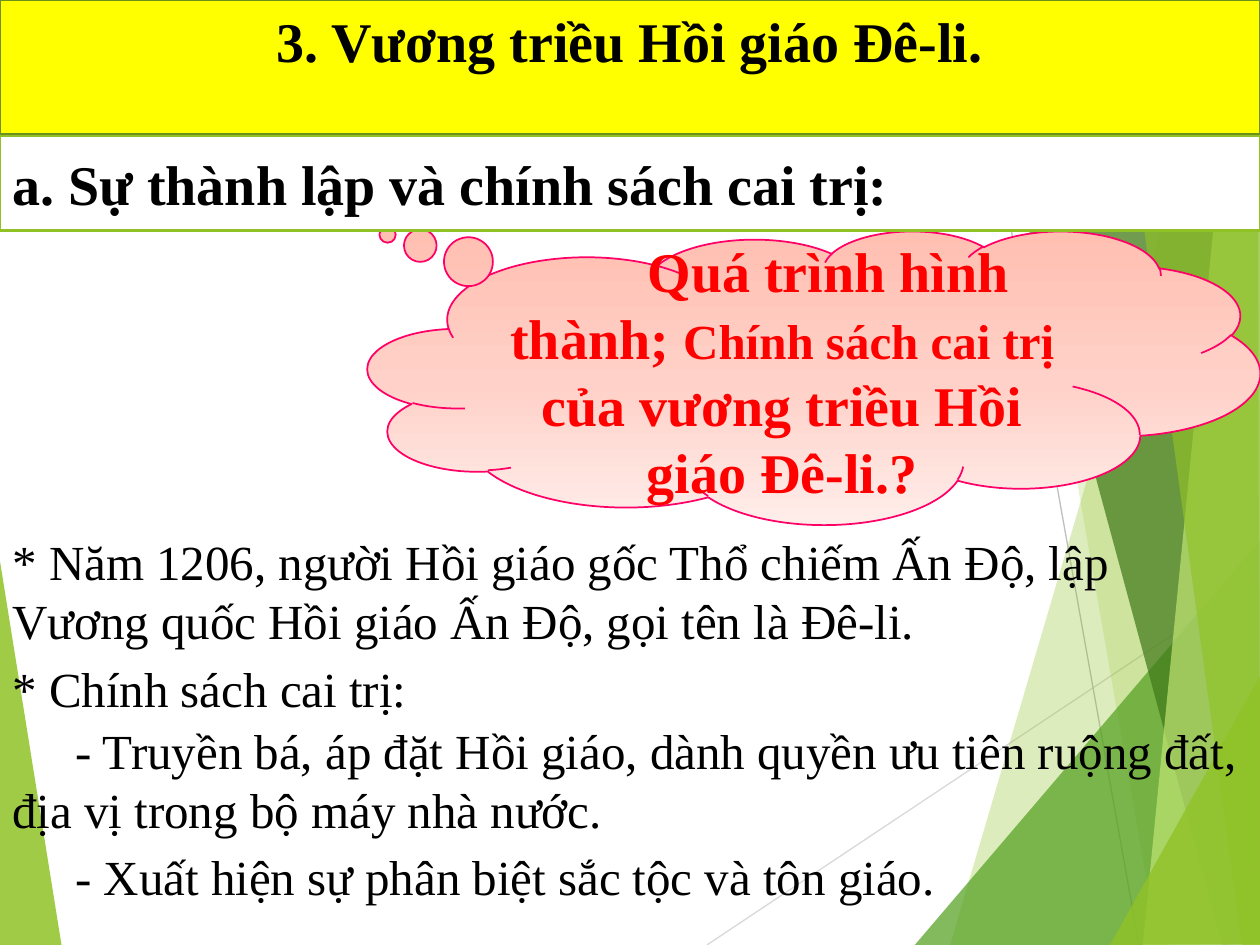
import copy

import pptx
import pptx.dml.color
import pptx.enum.shapes
import pptx.enum.text
import pptx.oxml
import pptx.oxml.ns
import pptx.util

Inches = pptx.util.Inches
Pt = pptx.util.Pt
SHAPES = pptx.enum.shapes.MSO_SHAPE
ALIGN = pptx.enum.text.PP_ALIGN
ANCHOR = pptx.enum.text.MSO_ANCHOR
FONT = "Times New Roman"

# Each facet: colour, opacity in percent, corner points in inches
LEFT_FACET = ("90C226", 85, [(-0.01, 4.39), (0.49, 7.51), (-0.01, 7.5)])
RIGHT_FACETS = [
    ("90C226", 30, [(9.75, 0), (7.54, 7.5), (10.02, 7.51), (10.01, 0.01)]),
    ("90C226", 20, [(7.88, -0.01), (9.19, 7.5), (10.01, 7.5), (10.01, -0.01)]),
    ("54A021", 72, [(7.26, 7.5), (10, 4.29), (10.01, 7.5)]),
    ("3F7819", 70, [(7.67, -0.01), (9.7, 7.5), (10.01, 7.49), (10.01, -0.01)]),
    ("C0E474", 70, [(9.81, -0.01), (9.07, 7.5), (10.01, 7.5), (10, -0.01)]),
    ("90C226", 65, [(8.83, -0.01), (9.86, 7.5), (10, 7.5), (9.98, -0.01)]),
    ("90C226", 80, [(8.81, 7.5), (10.01, 5.35), (10.01, 7.49)]),
]
# Each note: top, height, first-line indent, wording
NOTES = [
    (4.17, 1.04, 0, "* Năm 1206, người Hồi giáo gốc Thổ chiếm Ấn Độ, lập "
                    "Vương quốc Hồi giáo Ấn Độ, gọi tên là Đê-li."),
    (5.18, 0.57, 0, "* Chính sách cai trị:"),
    (5.67, 1.04, 0.5, "- Truyền bá, áp đặt Hồi giáo, dành quyền ưu tiên ruộng đất, "
                      "địa vị trong bộ máy nhà nước."),
    (6.67, 0.57, 0.5, "- Xuất hiện sự phân biệt sắc tộc và tôn giáo."),
]


def rgb(hex_color):
    return pptx.dml.color.RGBColor.from_string(hex_color)


def sub_element(parent, tag, **attributes):
    element = pptx.oxml.parse_xml(f"<{tag} {pptx.oxml.ns.nsdecls('a')}/>")
    for name, value in attributes.items():
        element.set(name, str(value))
    parent.append(element)


def add_facet(slide, color, opacity, points):
    corners = [(Inches(x), Inches(y)) for x, y in points]
    builder = slide.shapes.build_freeform(*corners[0])
    builder.add_line_segments(corners[1:], close=True)
    shape = builder.convert_to_shape()
    shape.shadow.inherit = False
    shape.line.fill.background()
    shape.fill.solid()
    shape.fill.fore_color.rgb = rgb(color)
    color_element = shape._element.spPr.find(".//" + pptx.oxml.ns.qn("a:srgbClr"))
    sub_element(color_element, "a:alpha", val=opacity * 1000)


def add_line(slide, start, end, color):
    connector = slide.shapes.add_connector(
        pptx.enum.shapes.MSO_CONNECTOR.STRAIGHT,
        *(Inches(value) for value in start + end))
    connector.line.color.rgb = rgb(color)
    connector.line.width = Pt(0.75)
    sub_element(connector._element.spPr, "a:effectLst")


def add_panel(slide, kind, box, line_color, line_width, fill_color=None):
    shape = slide.shapes.add_shape(kind, *(Inches(value) for value in box))
    shape.shadow.inherit = False
    shape.line.color.rgb = rgb(line_color)
    shape.line.width = Pt(line_width)
    if fill_color:
        shape.fill.solid()
        shape.fill.fore_color.rgb = rgb(fill_color)
    return shape


def set_gradient(shape, stops):
    """Fill from top to bottom with (position, colour) stops."""
    shape.fill.gradient()
    shape.fill.gradient_angle = 270
    stop_list = shape._element.spPr.find(".//" + pptx.oxml.ns.qn("a:gsLst"))
    while len(stop_list) < len(stops):
        stop_list.append(copy.deepcopy(stop_list[0]))
    for stop, (position, color) in zip(shape.fill.gradient_stops, stops):
        stop.position = position
        stop.color.rgb = rgb(color)


def write(shape, runs, color="000000", bold=False, align=ALIGN.LEFT,
          anchor=ANCHOR.TOP, indent=0):
    """Write one paragraph of (wording, size) runs."""
    frame = shape.text_frame
    frame.word_wrap = True
    frame.vertical_anchor = anchor
    paragraph = frame.paragraphs[0]
    paragraph.alignment = align
    if indent:
        properties = paragraph._p.get_or_add_pPr()
        properties.set("marL", "0")
        properties.set("indent", str(Inches(indent)))
    for wording, size in runs:
        run = paragraph.add_run()
        run.text = wording
        run.font.name = FONT
        run.font.size = Pt(size)
        run.font.bold = bold
        run.font.color.rgb = rgb(color)


def add_background(slide):
    add_facet(slide, *LEFT_FACET)
    add_line(slide, (5.61, 7.5), (10.01, 4.57), "D9D9D9")
    add_line(slide, (7.7, 0), (9.04, 7.5), "BFBFBF")
    for facet in RIGHT_FACETS:
        add_facet(slide, *facet)


def add_question(slide):
    cloud = add_panel(slide, SHAPES.CLOUD_CALLOUT, (2.92, 1.83, 7.08, 2.33), "FF0066", 1)
    cloud.adjustments[0] = -0.478
    cloud.adjustments[1] = -0.486
    set_gradient(cloud, [(0, "FFBFB1"), (0.52, "FFD1C8"), (1, "FFEDEA")])
    write(cloud, [("Quá trình hình thành; ", 32), ("Chính sách cai trị ", 28),
                  ("của vương triều Hồi giáo Đê-li.?", 32)],
          "FF0000", True, ALIGN.CENTER, ANCHOR.MIDDLE, indent=0.73)


def main():
    presentation = pptx.Presentation()
    presentation.slide_width = Inches(10)
    presentation.slide_height = Inches(7.5)
    slide = presentation.slides.add_slide(presentation.slide_layouts[6])

    add_background(slide)
    title = add_panel(slide, SHAPES.RECTANGLE, (0, 0, 10, 1.07), "6B901C", 1.5, "FFFF00")
    write(title, [("3. Vương triều Hồi giáo Đê-li.", 32)], bold=True, align=ALIGN.CENTER)
    add_question(slide)
    heading = add_panel(slide, SHAPES.RECTANGLE, (0, 1.08, 10, 0.75), "90C226", 1.5, "FFFFFF")
    write(heading, [("a. Sự thành lập và chính sách cai trị:", 32)],
          bold=True, anchor=ANCHOR.MIDDLE)
    for top, height, indent, wording in NOTES:
        note = slide.shapes.add_textbox(Inches(0), Inches(top), Inches(10), Inches(height))
        write(note, [(wording, 28)], indent=indent)

    presentation.save("out.pptx")


if __name__ == "__main__":
    main()
